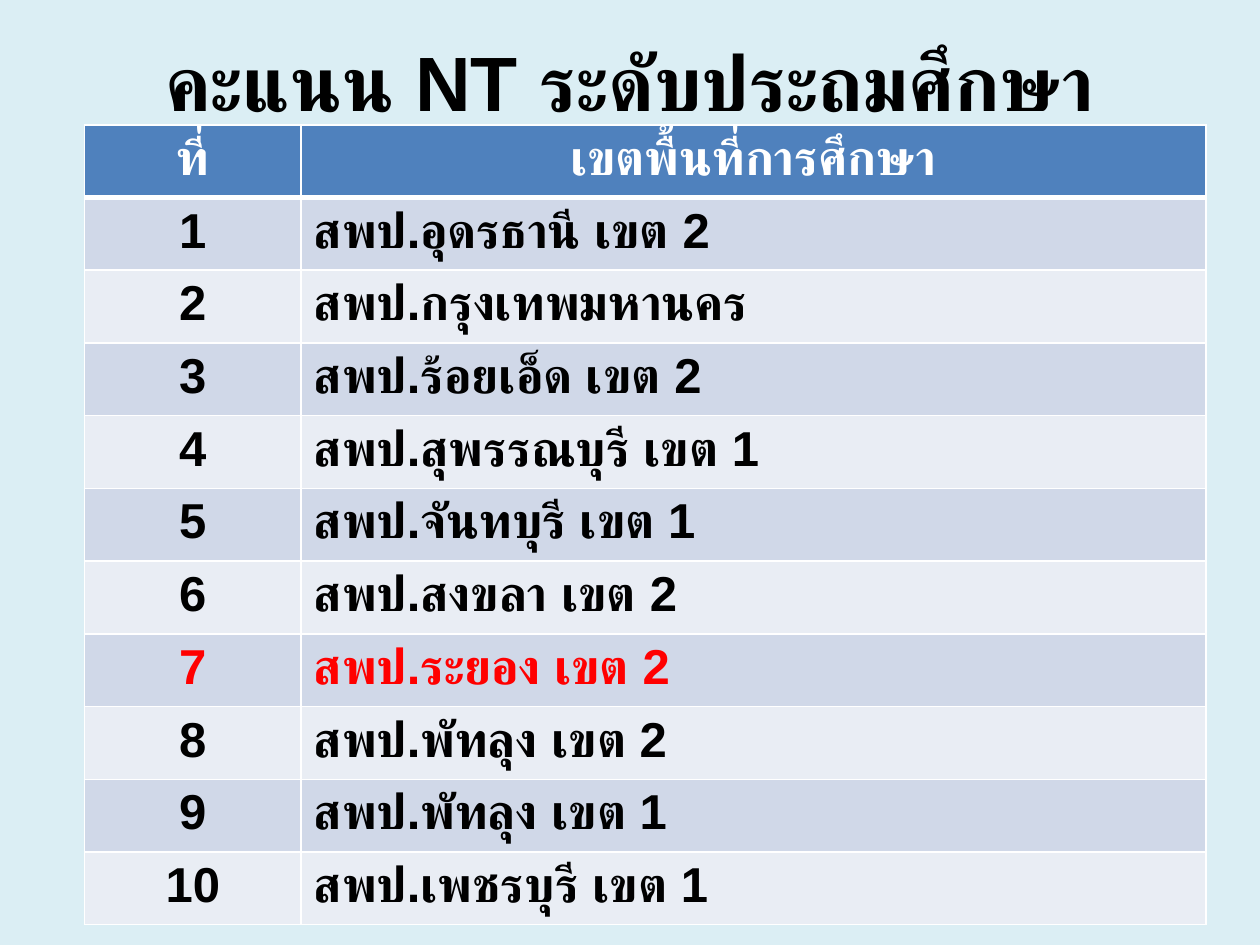
from lxml.etree import SubElement
from pptx import Presentation
from pptx.dml.color import RGBColor
from pptx.enum.text import MSO_ANCHOR, PP_ALIGN
from pptx.oxml.ns import qn
from pptx.util import Inches, Pt

# Content
TITLE = "คะแนน NT ระดับประถมศึกษา"
HEADER = ("ที่", "เขตพื้นที่การศึกษา")
AREAS = [
    "สพป.อุดรธานี เขต 2",
    "สพป.กรุงเทพมหานคร",
    "สพป.ร้อยเอ็ด เขต 2",
    "สพป.สุพรรณบุรี เขต 1",
    "สพป.จันทบุรี เขต 1",
    "สพป.สงขลา เขต 2",
    "สพป.ระยอง เขต 2",
    "สพป.พัทลุง เขต 2",
    "สพป.พัทลุง เขต 1",
    "สพป.เพชรบุรี เขต 1",
]
HIGHLIGHT_RANK = 7

# Look
FONT = "Arial"
BACKGROUND = RGBColor(0xDB, 0xEE, 0xF4)
BLUE = RGBColor(0x4F, 0x81, 0xBD)
BANDS = (RGBColor(0xE9, 0xED, 0xF4), RGBColor(0xD0, 0xD8, 0xE8))
WHITE = RGBColor(0xFF, 0xFF, 0xFF)
BLACK = RGBColor(0, 0, 0)
RED = RGBColor(0xFF, 0, 0)
COL_WIDTHS = (1.72, 7.18)
TABLE_HEIGHT = 6.35


def write(tf, text, size=28, color=BLACK, align=PP_ALIGN.LEFT):
    p = tf.paragraphs[0]
    p.alignment = align
    r = p.add_run()
    r.text = text
    r.font.name = FONT
    r.font.size = Pt(size)
    r.font.bold = True
    r.font.color.rgb = color
    # Thai glyphs take the complex-script font
    SubElement(r.font._element, qn("a:cs"), typeface=FONT)


def set_borders(cell, bottom=1):
    tcPr = cell._tc.get_or_add_tcPr()
    for side, width in (("L", 1), ("R", 1), ("T", 1), ("B", bottom)):
        ln = SubElement(tcPr, qn(f"a:ln{side}"), w=str(Pt(width)))
        fill = SubElement(ln, qn("a:solidFill"))
        SubElement(fill, qn("a:srgbClr"), val=str(WHITE))


prs = Presentation()
prs.slide_width, prs.slide_height = Inches(10), Inches(7.5)
s = prs.slides.add_slide(prs.slide_layouts[6])
s.background.fill.solid()
s.background.fill.fore_color.rgb = BACKGROUND

# Title
sp = s.shapes.add_textbox(Inches(0), Inches(0.13), Inches(10), Inches(1.02))
tf = sp.text_frame
tf.word_wrap = True
tf.vertical_anchor = MSO_ANCHOR.MIDDLE
write(tf, TITLE, size=44, align=PP_ALIGN.CENTER)

# Ranking table
rows = [HEADER] + [(str(rank), area) for rank, area in enumerate(AREAS, 1)]
table = s.shapes.add_table(
    len(rows), len(HEADER), Inches(0.67), Inches(0.99),
    Inches(sum(COL_WIDTHS)), Inches(TABLE_HEIGHT)).table
for column, width in zip(table.columns, COL_WIDTHS):
    column.width = Inches(width)

for i, row in enumerate(rows):
    is_header = i == 0
    color = WHITE if is_header else RED if i == HIGHLIGHT_RANK else BLACK
    for j, text in enumerate(row):
        cell = table.cell(i, j)
        set_borders(cell, bottom=3 if is_header else 1)
        cell.fill.solid()
        cell.fill.fore_color.rgb = BLUE if is_header else BANDS[i % 2]
        centred = is_header or j == 0
        write(cell.text_frame, text, color=color,
              align=PP_ALIGN.CENTER if centred else PP_ALIGN.LEFT)

prs.save("out.pptx")
